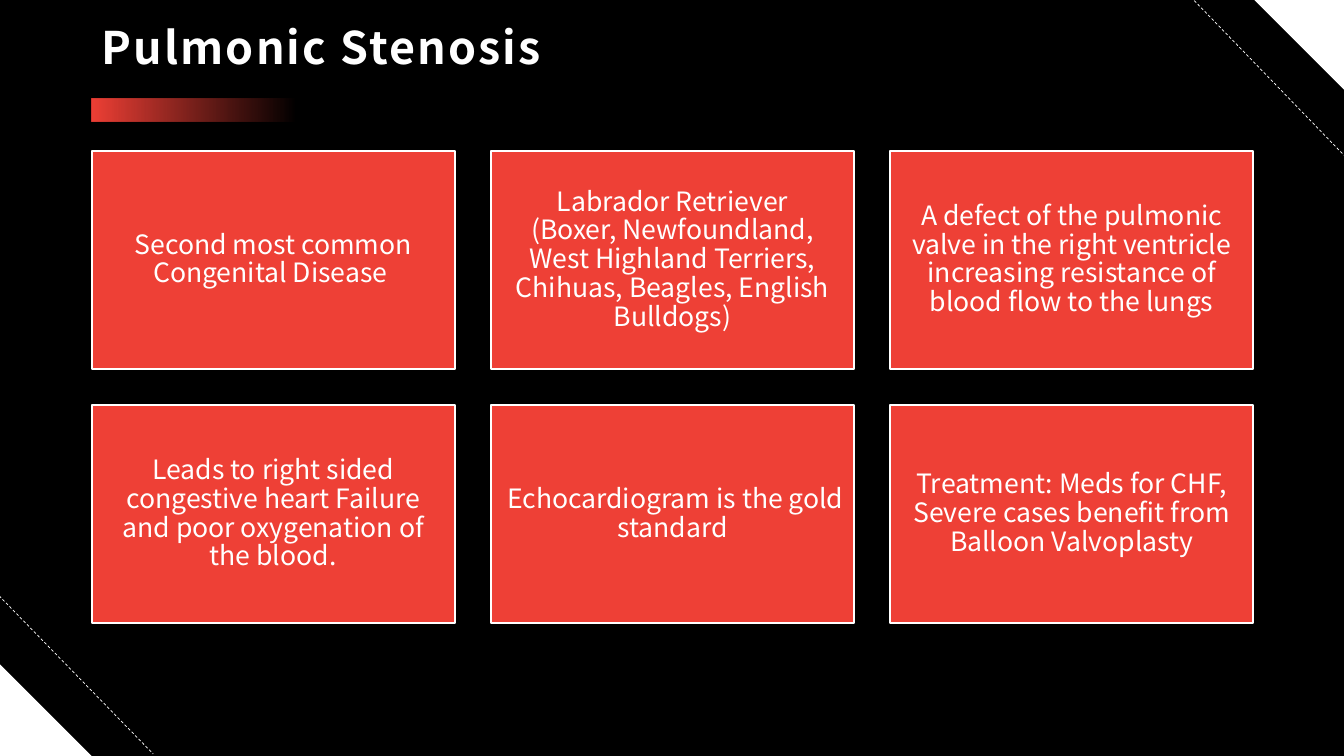
from lxml import etree
from pptx import Presentation
from pptx.dml.color import RGBColor
from pptx.enum.dml import MSO_LINE
from pptx.enum.shapes import MSO_CONNECTOR, MSO_SHAPE
from pptx.enum.text import MSO_ANCHOR, MSO_AUTO_SIZE, PP_ALIGN
from pptx.oxml.ns import qn
from pptx.util import Inches, Pt

RECTANGLE = MSO_SHAPE.RECTANGLE
TRIANGLE = MSO_SHAPE.RIGHT_TRIANGLE
STRAIGHT = MSO_CONNECTOR.STRAIGHT
DASH = MSO_LINE.DASH
MIDDLE = MSO_ANCHOR.MIDDLE
NO_AUTOFIT = MSO_AUTO_SIZE.NONE
LEFT, CENTER = PP_ALIGN.LEFT, PP_ALIGN.CENTER

COLORS = {"background": "000000", "white": "FFFFFF", "red": "EE4036"}
TITLE_FONT = {"name": "Noto Sans CJK TC", "size": Pt(32), "bold": True}
CARD_FONT = {"name": "Noto Sans CJK JP", "size": Pt(19), "bold": False}
CARD_FRAME = {
    "word_wrap": True, "vertical_anchor": MIDDLE,
    "margin_left": Inches(0.08), "margin_right": Inches(0.08),
    "margin_top": Inches(0.08), "margin_bottom": Inches(0.08),
}
TITLE_FRAME = {"word_wrap": True, "vertical_anchor": MIDDLE, "auto_size": NO_AUTOFIT}

MARGIN, CARDS_TOP = 0.91, 1.5
CARD_WIDTH, CARD_HEIGHT, CARD_GAP = 3.6, 2.16, 0.36
COLUMNS = 3
FACTS = [
    "Second most common Congenital Disease ",
    # A vertical tab becomes a line break
    "Labrador Retriever\v(Boxer, Newfoundland, West Highland Terriers, "
    "Chihuas, Beagles, English Bulldogs)",
    "A defect of the pulmonic valve in the right ventricle "
    "increasing resistance of blood flow to the lungs",
    "Leads to right sided congestive heart Failure "
    "and poor oxygenation of the blood.",
    " Echocardiogram is the gold standard",
    "Treatment: Meds for CHF, Severe cases benefit from Balloon Valvoplasty",
]


def color(name):
    return RGBColor.from_string(COLORS[name])


def apply(target, values):
    for attribute, value in values.items():
        setattr(target, attribute, value)


def write(frame, text, frame_values, font_values, alignment):
    apply(frame, frame_values)
    paragraph = frame.paragraphs[0]
    paragraph.text = text
    paragraph.alignment = alignment
    paragraph.line_spacing = 0.9
    for run in paragraph.runs:
        apply(run.font, font_values)
        run.font.color.rgb = color("white")
    return paragraph


def add_block(slide, kind, left, top, width, height, fill):
    block = slide.shapes.add_shape(
        kind, Inches(left), Inches(top), Inches(width), Inches(height))
    block.shadow.inherit = False
    block.fill.solid()
    block.fill.fore_color.rgb = color(fill)
    block.line.fill.background()
    return block


def add_dashed_line(slide, *ends):
    dashed = slide.shapes.add_connector(STRAIGHT, *map(Inches, ends))
    dashed.line.color.rgb = color("white")
    dashed.line.width = Pt(0.5)
    dashed.line.dash_style = DASH
    etree.SubElement(dashed.element.spPr, qn("a:effectLst"))


def add_fading_bar(slide, left, top, width, height):
    bar = add_block(slide, RECTANGLE, left, top, width, height, "red")
    bar.fill.gradient()
    bar.fill.gradient_angle = 0
    for stop, position in zip(bar.fill.gradient_stops, (0, 0.99)):
        stop.color.rgb = color("red")
        stop.position = position
    # The last stop is fully transparent
    last_color = bar.element.spPr.findall(".//" + qn("a:srgbClr"))[-1]
    etree.SubElement(last_color, qn("a:alpha")).set("val", "0")


def add_title(slide, text):
    title = slide.shapes.title
    apply(title, {"left": Inches(MARGIN), "top": Inches(0.18),
                  "width": Inches(11.51), "height": Inches(0.64)})
    heading = write(title.text_frame, text, TITLE_FRAME, TITLE_FONT, LEFT)
    for run in heading.runs:
        run.font._element.set("spc", "150")


def add_card(slide, index, fact):
    row, column = divmod(index, COLUMNS)
    card = add_block(slide, RECTANGLE,
                     MARGIN + column * (CARD_WIDTH + CARD_GAP),
                     CARDS_TOP + row * (CARD_HEIGHT + CARD_GAP),
                     CARD_WIDTH, CARD_HEIGHT, "red")
    card.line.color.rgb = color("white")
    card.line.width = Pt(1.5)
    write(card.text_frame, fact, CARD_FRAME, CARD_FONT, CENTER)


def main():
    deck = Presentation()
    deck.slide_width, deck.slide_height = Inches(13.33), Inches(7.5)
    slide = deck.slides.add_slide(deck.slide_layouts[5])
    slide.background.fill.solid()
    slide.background.fill.fore_color.rgb = color("background")

    # Corner decoration
    add_block(slide, TRIANGLE, 0, 6.59, 0.91, 0.91, "white")
    top_corner = add_block(slide, TRIANGLE, 12.43, -0.01, 0.91, 0.91, "white")
    top_corner.rotation = 180
    add_dashed_line(slide, -0.01, 5.91, 1.52, 7.48)
    add_dashed_line(slide, 11.81, -0.03, 13.34, 1.55)

    # Title with its accent
    add_fading_bar(slide, MARGIN, 0.98, 2.04, 0.23)
    add_title(slide, "Pulmonic Stenosis")

    # Grid of facts
    for index, fact in enumerate(FACTS):
        add_card(slide, index, fact)

    deck.save("out.pptx")


if __name__ == "__main__":
    main()
